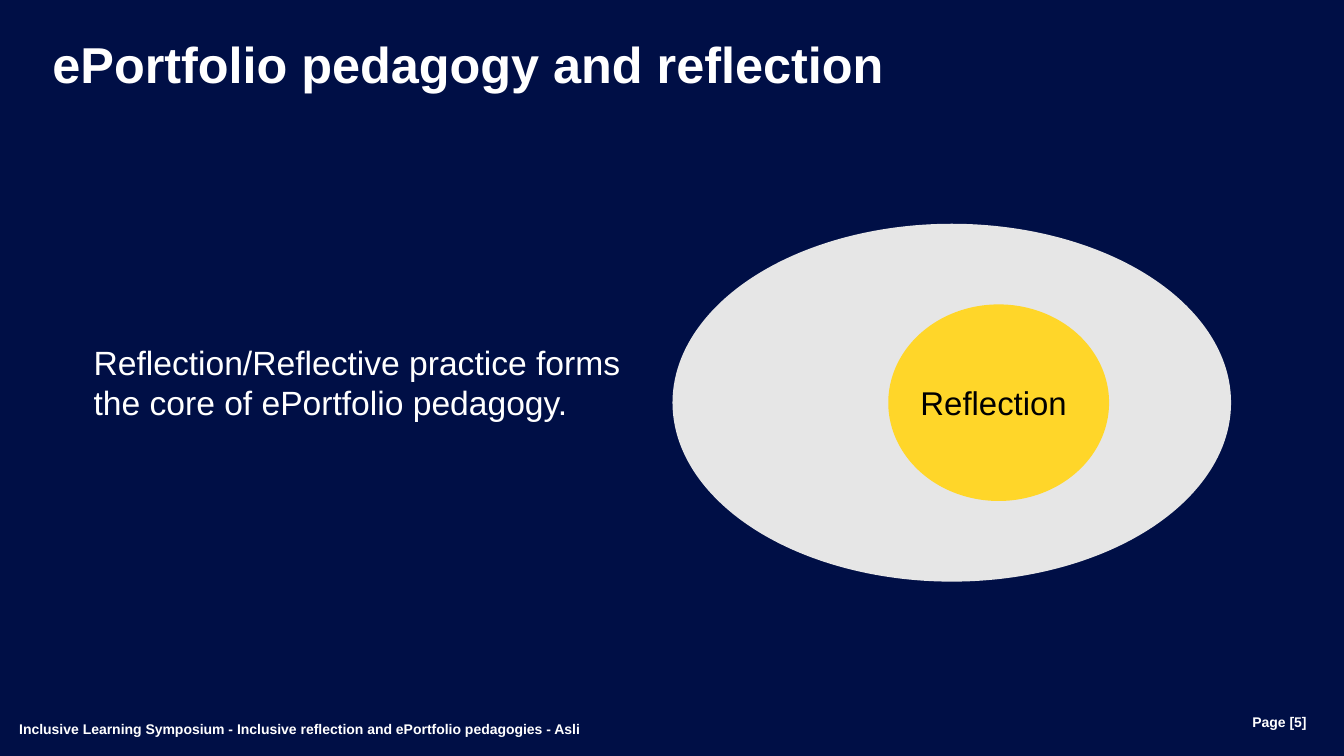
"""Build a slide that shows reflection as the core of ePortfolio pedagogy."""
from dataclasses import dataclass

from pptx import Presentation
from pptx import util as u
from pptx.dml.color import RGBColor
from pptx.enum import shapes, text
from pptx.shapes.autoshape import Shape
from pptx.slide import Slide


@dataclass(frozen=True)
class Theme:
    """Colours, font and type sizes of the slide."""
    navy: str = "000F46"
    white: str = "FFFFFF"
    black: str = "000000"
    egg_white: str = "E6E6E6"
    yolk: str = "FFD629"
    font: str = "Arial"
    title: float = 36
    body: float = 24
    label: float = 23.5
    footer: float = 10


@dataclass(frozen=True)
class Box:
    """Place of an element in inches."""
    left: float
    top: float
    width: float
    height: float

    def lengths(self) -> tuple[u.Length, ...]:
        """Return left, top, width and height as lengths."""
        return tuple(u.Inches(v) for v in (self.left, self.top, self.width, self.height))


@dataclass(frozen=True)
class Footer:
    """A line of text at the foot of the slide."""
    words: str
    box: Box
    align: text.PP_ALIGN


THEME = Theme()
TITLE_BOX = Box(0.38, 0.37, 10.6, 0.58)
BODY_BOX = Box(0.83, 3.34, 5.66, 0.91)
EGG_BOX = Box(6.67, 2.22, 5.54, 3.55)
YOLK_BOX = Box(8.81, 3.02, 2.19, 1.95)
FOOTERS = (
    Footer("Page [5]", Box(11.23, 7.04, 1.73, 0.24), text.PP_ALIGN.RIGHT),
    Footer("Inclusive Learning Symposium - Inclusive reflection and ePortfolio pedagogies - Asli",
           Box(0.19, 7.11, 6.29, 0.24), text.PP_ALIGN.LEFT),
)


def write(shape: Shape, words: str, *, size: float, color: str = THEME.white,
          bold: bool = False, align: text.PP_ALIGN = text.PP_ALIGN.LEFT,
          anchor: text.MSO_ANCHOR = text.MSO_ANCHOR.MIDDLE,
          line: float | None = None, wrap: bool = True,
          margins: tuple[float, float, float, float] = (0, 0, 0, 0),
          fit: text.MSO_AUTO_SIZE = text.MSO_AUTO_SIZE.NONE) -> None:
    """Put formatted text in a shape; margins are left, top, right, bottom."""
    frame = shape.text_frame
    frame.word_wrap = wrap
    frame.auto_size = fit
    frame.vertical_anchor = anchor
    (frame.margin_left, frame.margin_top,
     frame.margin_right, frame.margin_bottom) = map(u.Inches, margins)
    paragraph = frame.paragraphs[0]
    paragraph.alignment = align
    if line is not None:
        paragraph.line_spacing = u.Pt(line)
    run = paragraph.add_run()
    run.text = words
    run.font.name = THEME.font
    run.font.size = u.Pt(size)
    run.font.bold = bold
    run.font.color.rgb = RGBColor.from_string(color)


def add_ellipse(slide: Slide, box: Box, color: str) -> Shape:
    """Add a filled ellipse without outline or shadow."""
    ellipse = slide.shapes.add_shape(shapes.MSO_SHAPE.OVAL, *box.lengths())
    ellipse.shadow.inherit = False
    ellipse.fill.solid()
    ellipse.fill.fore_color.rgb = RGBColor.from_string(color)
    ellipse.line.fill.background()
    return ellipse


def main() -> None:
    """Build and save the slide."""
    presentation = Presentation()
    presentation.slide_width = u.Inches(13.33)
    presentation.slide_height = u.Inches(7.5)
    slide = presentation.slides.add_slide(presentation.slide_layouts[5])
    slide.background.fill.solid()
    slide.background.fill.fore_color.rgb = RGBColor.from_string(THEME.navy)

    title = slide.shapes.title
    title.left, title.top, title.width, title.height = TITLE_BOX.lengths()
    write(title, "ePortfolio pedagogy and reflection", size=THEME.title, bold=True,
          anchor=text.MSO_ANCHOR.TOP, line=40, margins=(0.14, 0, 0, 0))

    body = slide.shapes.add_textbox(*BODY_BOX.lengths())
    write(body, "Reflection/Reflective practice forms the core of ePortfolio pedagogy.",
          size=THEME.body, anchor=text.MSO_ANCHOR.TOP, margins=(0.1, 0.05, 0.1, 0.05),
          fit=text.MSO_AUTO_SIZE.SHAPE_TO_FIT_TEXT)

    add_ellipse(slide, EGG_BOX, THEME.egg_white)
    yolk = add_ellipse(slide, YOLK_BOX, THEME.yolk)
    write(yolk, "Reflection", size=THEME.label, color=THEME.black, wrap=False,
          align=text.PP_ALIGN.CENTER, margins=(0, 0, 0.1, 0))

    for footer in FOOTERS:
        write(slide.shapes.add_textbox(*footer.box.lengths()), footer.words,
              size=THEME.footer, bold=True, align=footer.align, line=12)

    presentation.save("out.pptx")


if __name__ == "__main__":
    main()
